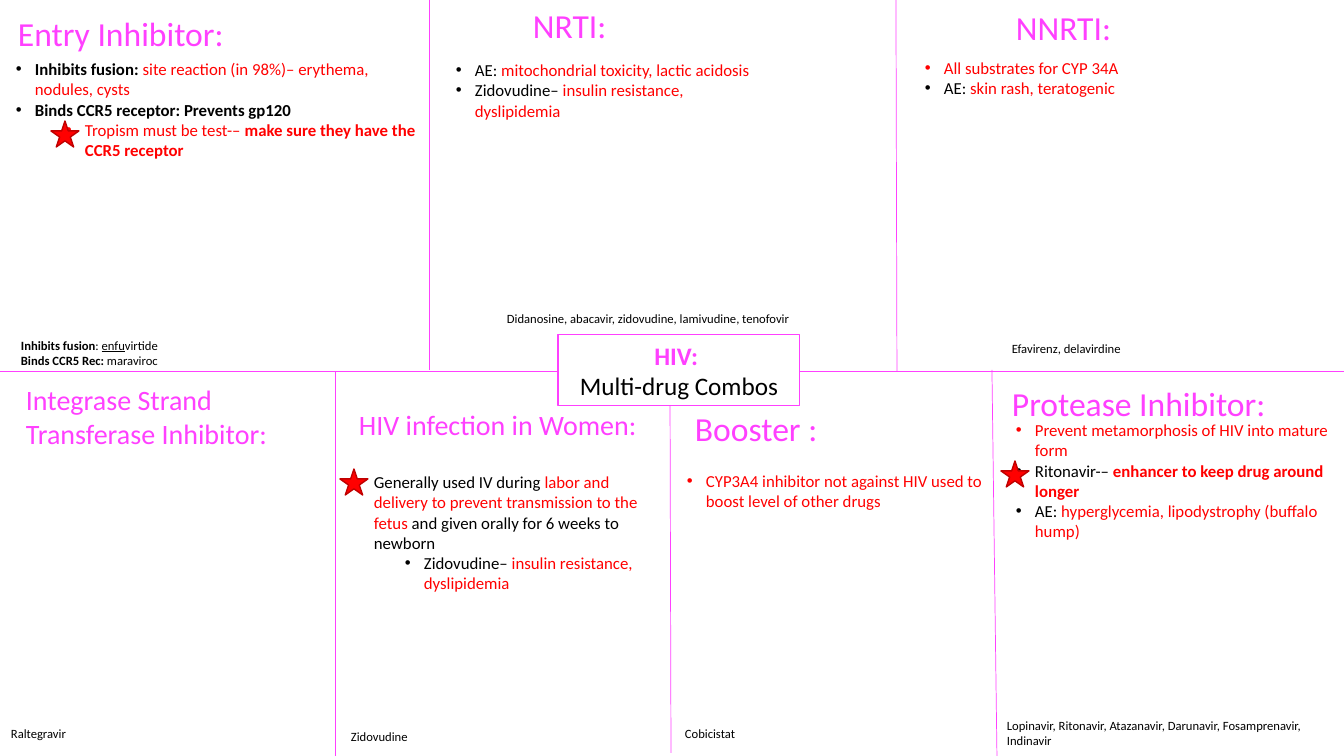
"""Build the one-slide overview of HIV drug classes."""
from lxml.etree import SubElement
from pptx import Presentation
from pptx.dml.color import RGBColor
from pptx.enum.shapes import MSO_CONNECTOR as Connector, MSO_SHAPE as Shape
from pptx.enum.text import MSO_ANCHOR as Anchor, MSO_AUTO_SIZE as AutoSize, PP_ALIGN as Align
from pptx.oxml.ns import qn
from pptx.util import Pt

SCALE = 914400 / 100.8
FONT = "Calibri"
COLORS = {"pink": "FF40FF", "red": "FF0000", "dark red": "C00000",
          "black": "000000", "white": "FFFFFF"}
SLIDE_SIZE = (1344, 756)
INDENTS = (19, 69)
HANGING = 19

DIVIDERS = [
    (670, 370, 671, 753),
    (0, 371, 1344, 371),
    (335, 371, 335, 756),
    (992, 370, 997, 756),
    (429, 0, 429, 370),
    (896, 0, 897, 372),
]

HEADINGS = [
    ("Entry Inhibitor:", (8, 8, 394, 50), 24),
    ("NRTI:", (523, 0, 261, 50), 24),
    ("NNRTI:", (1006, 2, 261, 50), 24),
    ("Integrase Strand Transferase Inhibitor:", (16, 378, 320, 78), 20),
    ("HIV infection in Women:", (349, 403, 320, 44), 20),
    ("Booster :", (685, 403, 291, 50), 24),
    ("Protease Inhibitor:", (1002, 378, 291, 50), 24),
]

NOTES = [
    ((6, 54, 421, 112), [
        (0, [("Inhibits fusion: ", "black bold"),
             ("site reaction (in 98%)– erythema, nodules, cysts", "red")]),
        (0, [("Binds CCR5 receptor: Prevents gp120", "black bold")]),
        (1, [("Tropism must be test-– ", "red"),
             ("make sure they have the CCR5 receptor", "red bold")]),
    ]),
    ((446, 55, 321, 72), [
        (0, [("AE: ", "black"), ("mitochondrial toxicity, lactic acidosis", "red")]),
        (0, [("Zidovudine– ", "black"), ("insulin resistance, dyslipidemia", "red")]),
    ]),
    ((915, 53, 416, 50), [
        (0, [("All substrates for CYP 34A", "red")]),
        (0, [("AE: ", "black"), ("skin rash, teratogenic", "red")]),
    ]),
    ((345, 467, 330, 152), [
        (0, [("Generally used IV during ", "black"),
             ("labor and delivery to prevent transmission to the fetus", "red"),
             (" and given orally for 6 weeks to newborn", "black")]),
        (1, [("Zidovudine– ", "black"), ("insulin resistance, dyslipidemia", "red")]),
    ]),
    ((677, 466, 330, 72), [
        (0, [("CYP3A4 inhibitor not against HIV used to boost level of other drugs", "red")]),
    ]),
    ((1006, 415, 338, 132), [
        (0, [("Prevent metamorphosis of HIV into mature form", "red")]),
        (0, [("Ritonavir-– ", "black"), ("enhancer to keep drug around longer", "red bold")]),
        (0, [("AE: ", "black"), ("hyperglycemia, lipodystrophy (buffalo hump)", "red")]),
    ]),
]

DRUGS = [
    ((11, 333, 325, 40), [
        [("Inhibits fusion", "black bold"), (": ", "black"),
         ("enfu", "black underline"), ("virtide", "black")],
        [("Binds CCR5 Rec:", "black bold"), (" maraviroc", "black")],
    ]),
    ((497, 306, 377, 25),
     [[("Didanosine, abacavir, zidovudine, lamivudine, tenofovir", "black")]]),
    ((1002, 336, 265, 26), [[("Efavirenz, delavirdine", "black")]]),
    ((1, 721, 325, 25), [[("Raltegravir", "black")]]),
    ((341, 724, 181, 25), [[("Zidovudine", "black")]]),
    ((675, 721, 335, 25), [[("Cobicistat", "black")]]),
    ((997, 713, 335, 40),
     [[("Lopinavir, Ritonavir, Atazanavir, Darunavir, Fosamprenavir, Indinavir", "black")]]),
]

STARS = [(51, 121), (340, 469), (1001, 461)]
STAR_SIZE = (28, 26)
TOPIC_FRAME = (558, 335, 242, 71)
TOPIC = [[("HIV: ", "pink bold")], [("Multi-drug Combos", "black")]]


def px(*lengths):
    return [round(length * SCALE) for length in lengths]


def color(name):
    return RGBColor.from_string(COLORS[name])


def outline(shape, fill, line, width):
    shape.fill.solid()
    shape.fill.fore_color.rgb = color(fill)
    shape.line.color.rgb = color(line)
    shape.line.width = Pt(width)


def write(box, paragraphs, size, align=Align.LEFT, anchor=Anchor.TOP,
          fit=AutoSize.SHAPE_TO_FIT_TEXT, levels=None):
    frame = box.text_frame
    frame.word_wrap = True
    frame.auto_size = fit
    frame.vertical_anchor = anchor
    for index, runs in enumerate(paragraphs):
        para = frame.add_paragraph() if index else frame.paragraphs[0]
        para.alignment = align
        if levels:
            para.level = levels[index]
            indent, hanging = px(INDENTS[para.level], HANGING)
            properties = para._p.get_or_add_pPr()
            properties.set("marL", str(indent))
            properties.set("indent", str(-hanging))
            SubElement(properties, qn("a:buFont"), typeface="Arial")
            SubElement(properties, qn("a:buChar"), char="•")
        for text, style in runs:
            name, *effects = style.split()
            span = para.add_run()
            span.text = text
            span.font.name = FONT
            span.font.size = Pt(size)
            span.font.color.rgb = color(name)
            span.font.bold = "bold" in effects
            span.font.underline = "underline" in effects


def main():
    deck = Presentation()
    deck.slide_width, deck.slide_height = px(*SLIDE_SIZE)
    page = deck.slides.add_slide(deck.slide_layouts[5])
    shapes = page.shapes

    for ends in DIVIDERS:
        divider = shapes.add_connector(Connector.STRAIGHT, *px(*ends))
        divider.line.color.rgb = color("pink")
        divider.line.width = Pt(0.5)
        SubElement(divider._element.spPr, qn("a:effectLst"))

    for text, frame, size in HEADINGS:
        write(shapes.add_textbox(*px(*frame)), [[(text, "pink")]], size)
    for frame, items in NOTES:
        levels, paragraphs = zip(*items)
        write(shapes.add_textbox(*px(*frame)), paragraphs, 12, levels=levels)
    for frame, paragraphs in DRUGS:
        write(shapes.add_textbox(*px(*frame)), paragraphs, 9)

    for corner in STARS:
        star = shapes.add_shape(Shape.STAR_5_POINT, *px(*corner, *STAR_SIZE))
        star.shadow.inherit = False
        outline(star, "red", "dark red", 1)

    topic = shapes.title
    topic.left, topic.top, topic.width, topic.height = px(*TOPIC_FRAME)
    outline(topic, "white", "pink", 0.75)
    write(topic, TOPIC, 18, align=Align.CENTER, anchor=Anchor.MIDDLE, fit=AutoSize.NONE)
    shapes._spTree.append(topic._element)

    deck.save("out.pptx")


if __name__ == "__main__":
    main()
